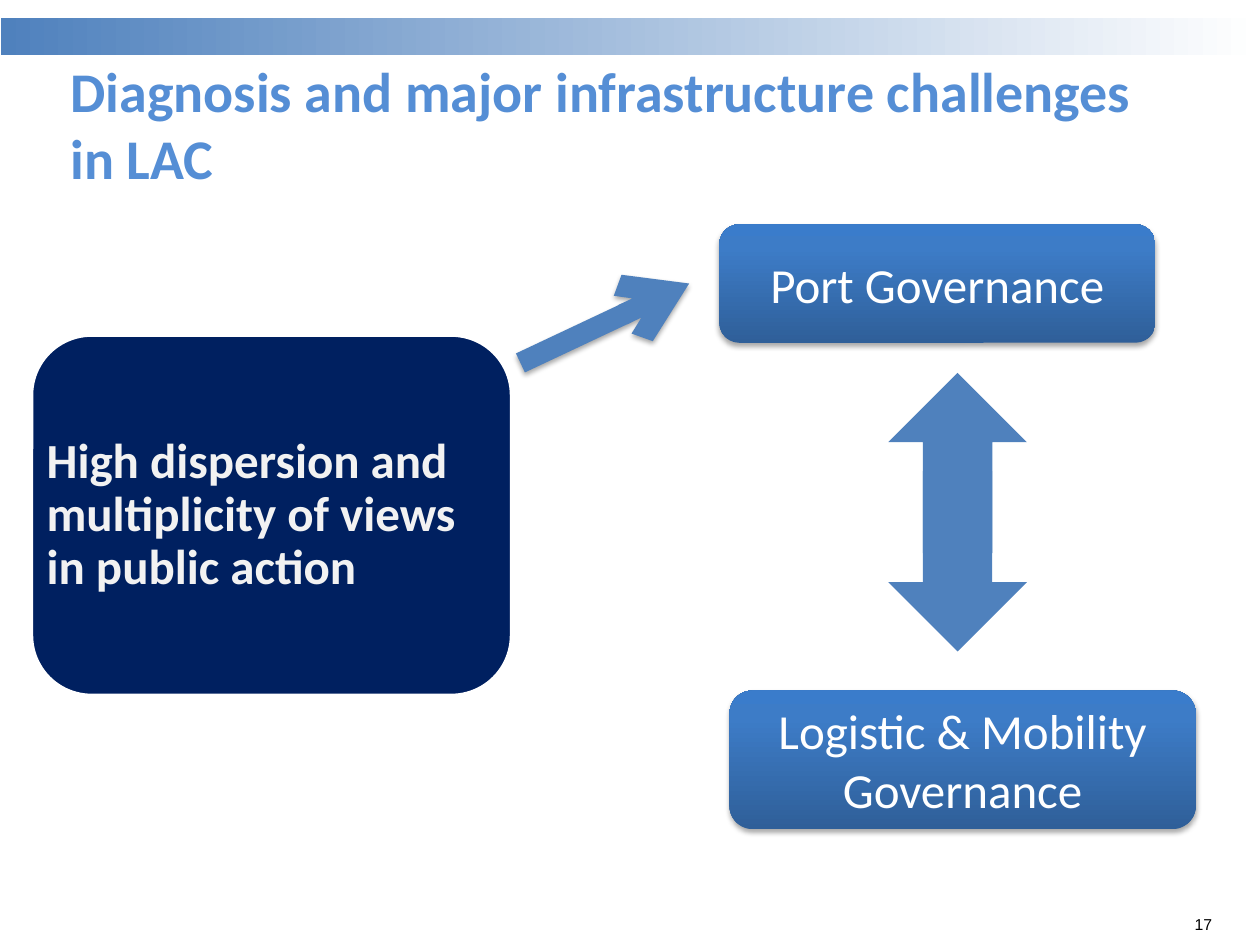
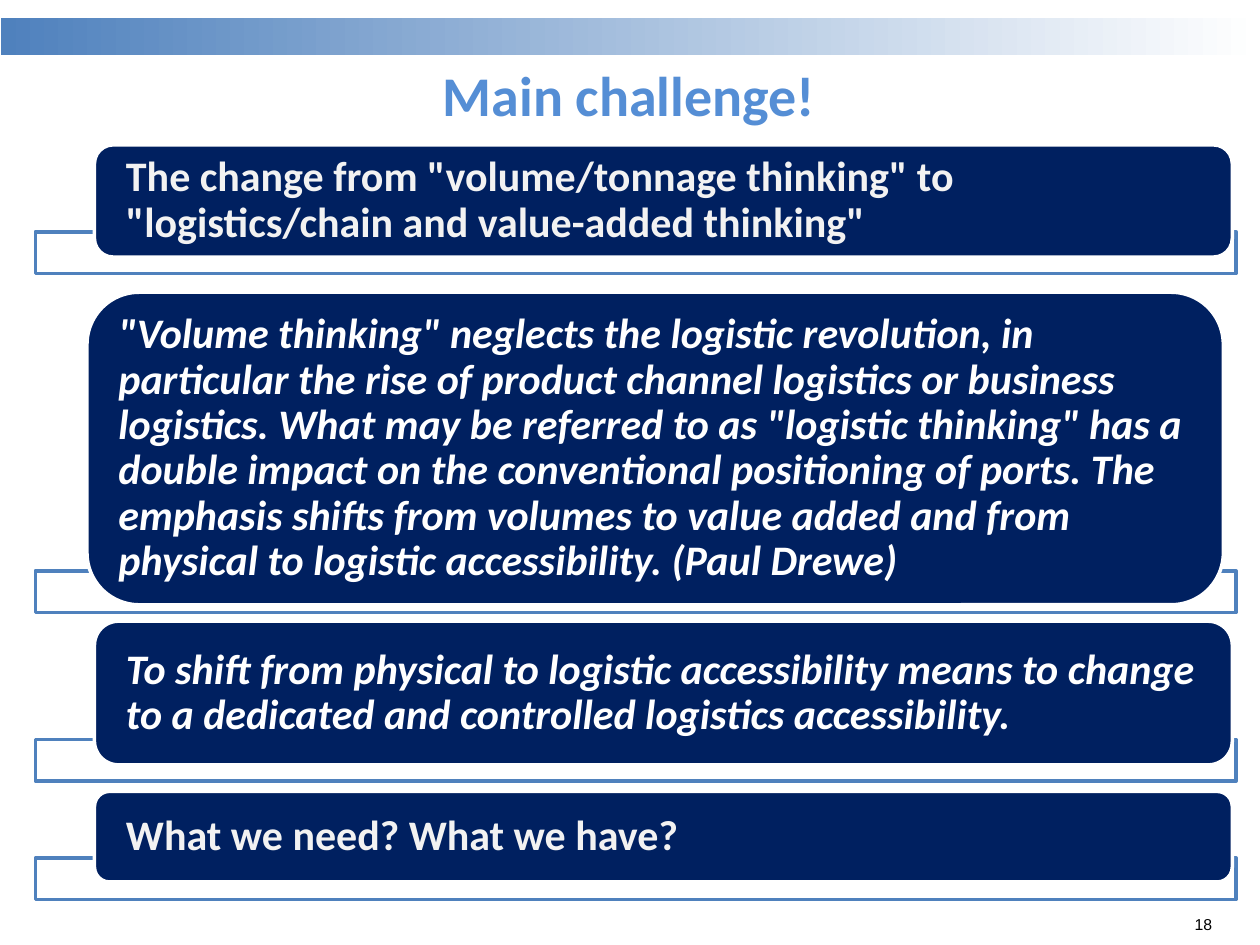
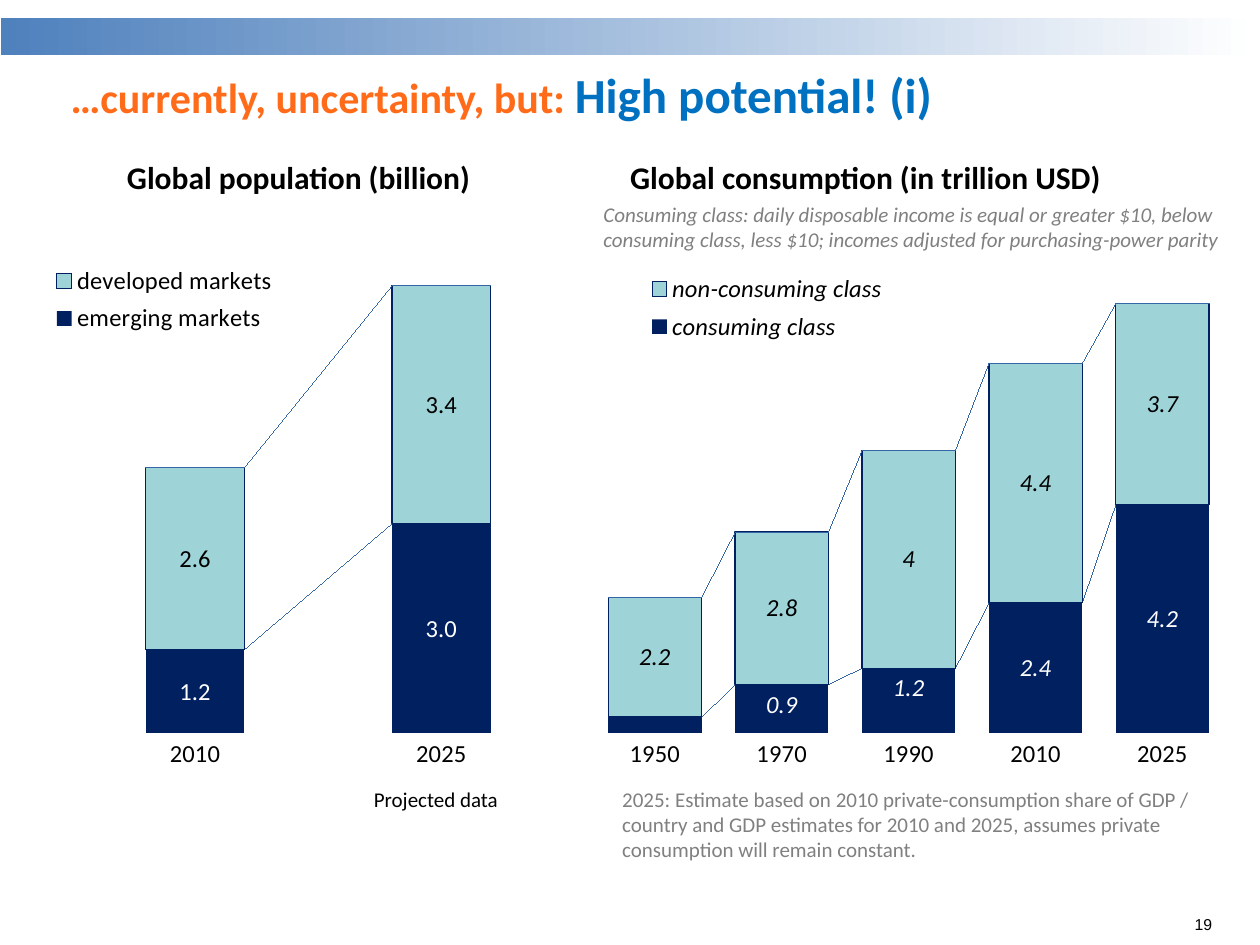
from dataclasses import dataclass

from pptx import Presentation
from pptx.chart.data import CategoryChartData
from pptx.dml.color import RGBColor
from pptx.enum.chart import XL_CHART_TYPE, XL_LABEL_POSITION, XL_LEGEND_POSITION, XL_TICK_MARK
from pptx.enum.shapes import MSO_CONNECTOR, MSO_SHAPE
from pptx.enum.text import MSO_ANCHOR, MSO_AUTO_SIZE, PP_ALIGN
from pptx.oxml import parse_xml
from pptx.oxml.ns import nsdecls, qn
from pptx.util import Pt

LEFT, CENTER, RIGHT = PP_ALIGN.LEFT, PP_ALIGN.CENTER, PP_ALIGN.RIGHT
TOP, MIDDLE = MSO_ANCHOR.TOP, MSO_ANCHOR.MIDDLE
RECTANGLE, ROUNDED = MSO_SHAPE.RECTANGLE, MSO_SHAPE.ROUNDED_RECTANGLE
DOWN_ARROW = MSO_SHAPE.DOWN_ARROW
LABEL_CENTER, LABEL_INSIDE_END = XL_LABEL_POSITION.CENTER, XL_LABEL_POSITION.INSIDE_END

COLORS = {
    "title": "558ED5",
    "blue": "4F81BD",
    "navy": "002060",
    "teal": "9ED3D7",
    "white": "FFFFFF",
    "off_white": "F2F2F2",
    "black": "000000",
    "gray": "808080",
    "orange": "FF6B19",
    "bright_blue": "0070C0",
    "series_line": "3A6FB5",
    "box_dark": "2F5F99",
    "box_mid": "3D7CC7",
    "box_light": "3A7CCB",
}
BAND_STOPS = [(0, "blue"), (100, "white")]
BOX_STOPS = [(0, "box_dark"), (80, "box_mid"), (100, "box_light")]
FIRST_NUMBER = 17


@dataclass(frozen=True)
class Area:
    left: float
    top: float
    width: float
    height: float

    def lengths(self) -> list:
        return [Pt(value) for value in (self.left, self.top, self.width, self.height)]


@dataclass(frozen=True)
class Style:
    size: float
    color: str = "black"
    bold: bool = False
    italic: bool = False
    align: PP_ALIGN = LEFT
    anchor: MSO_ANCHOR = TOP
    font: str = "Calibri"
    inset_x: float = 7.2
    inset_y: float = 3.6
    line_spacing: float = 1.0
    wrap: bool = True


@dataclass(frozen=True)
class Panel:
    area: Area
    rail_top: float
    text: str
    style: Style


@dataclass(frozen=True)
class StackedChart:
    area: Area
    categories: list
    series: dict
    number_format: str
    maximum: float
    gap: int
    plot_layout: tuple
    legend_layout: tuple
    lower_position: XL_LABEL_POSITION
    centered_points: tuple = ()
    unlabeled_points: tuple = ()
    italic: bool = False


TITLE = Style(32, "title", bold=True, anchor=MIDDLE)
CENTERED_TITLE = Style(32, "title", bold=True, align=CENTER, anchor=MIDDLE)
PAGE_NUMBER = Style(9, align=RIGHT, font="Arial", inset_x=0, inset_y=0, wrap=False)
BOX_LABEL = Style(28, "white", align=CENTER, anchor=MIDDLE)
DISPERSION = Style(28, "off_white", bold=True, anchor=MIDDLE,
                   inset_x=8.64, inset_y=8.64, line_spacing=0.9)
STATEMENT = Style(24, "off_white", bold=True, anchor=MIDDLE,
                  inset_x=18, inset_y=0, line_spacing=0.9)
QUOTE = Style(24, "white", bold=True, italic=True, anchor=MIDDLE,
              inset_x=18, inset_y=0, line_spacing=0.9)
CHART_HEADING = Style(18, bold=True, anchor=MIDDLE)

PANELS = [
    Panel(Area(54, 82.8, 650.2, 64.1), 132.5,
          'The change from "volume/tonnage thinking" to '
          '"logistics/chain and value-added thinking"', STATEMENT),
    Panel(Area(49.7, 167, 649.4, 178.6), 326.2,
          '"Volume thinking" neglects the logistic revolution, in particular the rise of '
          'product channel logistics or business logistics. What may be referred to as '
          '"logistic thinking" has a double impact on the conventional positioning of ports. '
          'The emphasis shifts from volumes to value added and from physical to logistic '
          'accessibility. (Paul Drewe)', QUOTE),
    Panel(Area(54, 355, 650.2, 82.1), 422.6,
          "To shift from physical to logistic accessibility means to change to a dedicated "
          "and controlled logistics accessibility.", QUOTE),
    Panel(Area(54, 452.2, 650.2, 51.8), 490.3, "What we need? What we have?", STATEMENT),
]

CHARTS = [
    StackedChart(
        Area(323.3, 133.9, 396.7, 311.8),
        ["1950", "1970", "1990", "2010", "2025"],
        {"consuming class": [0.3, 0.9, 1.2, 2.4, 4.2],
         "non-consuming class": [2.2, 2.8, 4, 4.4, 3.7]},
        "General", 9, 36, (0.037, 0.017, 0.914, 0.898), (0.07, 0.06, 0.44, 0.15),
        LABEL_INSIDE_END, centered_points=(3, 4), unlabeled_points=(0,), italic=True),
    StackedChart(
        Area(8.6, 133.9, 334.8, 311.8),
        ["2010", "2025"],
        {"emerging markets": [1.2, 3], "developed markets": [2.6, 3.4]},
        "0.0", 7, 150, (0.097, 0.017, 0.841, 0.898), (0.015, 0.045, 0.48, 0.15),
        LABEL_CENTER),
]

NOTES = [
    (Area(65.5, 88.6, 260, 24.5), "Global population (billion)", CHART_HEADING),
    (Area(353, 88.6, 353, 24.5), "Global consumption (in trillion USD)", CHART_HEADING),
    (Area(337.7, 111.6, 382.3, 36),
     "Consuming class: daily disposable income is equal or greater $10, below consuming "
     "class, less $10; incomes adjusted for purchasing-power parity",
     Style(12, "gray", italic=True)),
    (Area(206.6, 445.7, 86.4, 21.6), "Projected data", Style(12, wrap=False)),
    (Area(348.5, 445.7, 348.5, 51.1),
     "2025: Estimate based on 2010 private-consumption share of GDP / country and GDP "
     "estimates for 2010 and 2025, assumes private consumption will remain constant.",
     Style(12, "gray")),
]


def rgb(name: str) -> RGBColor:
    return RGBColor.from_string(COLORS[name])


def write_text(frame, text: str, style: Style):
    """Fill a text frame with one paragraph and return that paragraph."""
    frame.auto_size = MSO_AUTO_SIZE.NONE
    frame.word_wrap = style.wrap
    frame.vertical_anchor = style.anchor
    frame.margin_left = frame.margin_right = Pt(style.inset_x)
    frame.margin_top = frame.margin_bottom = Pt(style.inset_y)
    para = frame.paragraphs[0]
    para.text = text
    para.alignment = style.align
    para.line_spacing = style.line_spacing
    font = para.font
    font.name, font.size = style.font, Pt(style.size)
    font.bold, font.italic = style.bold, style.italic
    font.color.rgb = rgb(style.color)
    return para


def add_text(page, area: Area, text: str, style: Style) -> None:
    write_text(page.shapes.add_textbox(*area.lengths()).text_frame, text, style)


def add_box(page, kind, area: Area, fill: str = "", line: str = ""):
    """Draw a preset shape; an empty colour name means no fill or no line."""
    box = page.shapes.add_shape(kind, *area.lengths())
    box.shadow.inherit = False
    if fill:
        box.fill.solid()
        box.fill.fore_color.rgb = rgb(fill)
    else:
        box.fill.background()
    if line:
        box.line.color.rgb = rgb(line)
        box.line.width = Pt(2)
    else:
        box.line.fill.background()
    return box


def add_gradient_box(page, kind, area: Area, stops: list, angle: int):
    box = add_box(page, kind, area)
    stop_xml = "".join(
        f'<a:gs pos="{place * 1000}"><a:srgbClr val="{COLORS[name]}"/></a:gs>'
        for place, name in stops)
    gradient = parse_xml(
        f'<a:gradFill {nsdecls("a")} rotWithShape="1"><a:gsLst>{stop_xml}</a:gsLst>'
        f'<a:lin ang="{angle * 60000}" scaled="0"/></a:gradFill>')
    properties = box.element.spPr
    properties.replace(properties.find(qn("a:noFill")), gradient)
    return box


def add_shadow(shape) -> None:
    properties = shape.element.spPr
    empty = properties.find(qn("a:effectLst"))
    if empty is not None:
        properties.remove(empty)
    properties.append(parse_xml(
        f'<a:effectLst {nsdecls("a")}><a:outerShdw blurRad="{Pt(3.1)}" dist="{Pt(1.8)}" '
        f'dir="5400000" rotWithShape="0"><a:srgbClr val="{COLORS["black"]}">'
        '<a:alpha val="35000"/></a:srgbClr></a:outerShdw></a:effectLst>'))


def add_panel(page, area: Area, text: str, style: Style) -> None:
    add_box(page, ROUNDED, area, "navy", "white")
    add_text(page, area, text, style)


def add_page(deck, number: int, title: str, style: Style, title_top: float = 30.2):
    """Start a slide with its title, top band and page number."""
    page = deck.slides.add_slide(deck.slide_layouts.get_by_name("Title Only"))
    heading = page.shapes.title
    area = Area(33.1, title_top, 653, 47.5)
    heading.left, heading.top, heading.width, heading.height = area.lengths()
    write_text(heading.text_frame, title, style)
    add_gradient_box(page, RECTANGLE, Area(0.7, 10.1, 719.3, 21.6), BAND_STOPS, 0)
    add_text(page, Area(681.8, 522.7, 10.8, 10.8), str(number), PAGE_NUMBER)
    return page


def set_layout(parent, index: int, layout: tuple, inner: bool = False) -> None:
    """Place a chart part by fractions of the chart's size."""
    for old in parent.findall(qn("c:layout")):
        parent.remove(old)
    target = '<c:layoutTarget val="inner"/>' if inner else ""
    sizes = "".join(f'<c:{name} val="{value}"/>' for name, value in zip("xywh", layout))
    parent.insert(index, parse_xml(
        f'<c:layout {nsdecls("c")}><c:manualLayout>{target}<c:xMode val="edge"/>'
        f'<c:yMode val="edge"/>{sizes}</c:manualLayout></c:layout>'))


def format_font(font, color: str, italic: bool = False) -> None:
    font.name, font.size, font.italic = "Calibri", Pt(14), italic
    font.color.rgb = rgb(color)


def add_series_lines(chart) -> None:
    overlap = chart.element.xpath(".//c:barChart/c:overlap")[0]
    overlap.addnext(parse_xml(
        f'<c:serLines {nsdecls("c", "a")}><c:spPr><a:ln w="{Pt(0.5)}"><a:solidFill>'
        f'<a:srgbClr val="{COLORS["series_line"]}"/></a:solidFill></a:ln></c:spPr>'
        '</c:serLines>'))


def label_series(series, color: str, position, info: StackedChart) -> None:
    labels = series.data_labels
    labels.show_value = True
    labels.number_format, labels.number_format_is_linked = info.number_format, False
    labels.position = position
    format_font(labels.font, color, info.italic)


def add_stacked_chart(page, info: StackedChart) -> None:
    data = CategoryChartData(number_format=info.number_format)
    data.categories = info.categories
    for name, values in info.series.items():
        data.add_series(name, values)
    chart = page.shapes.add_chart(
        XL_CHART_TYPE.COLUMN_STACKED, *info.area.lengths(), data).chart
    chart.has_title = False
    format_font(chart.font, "black")

    chart.has_legend = True
    chart.legend.position = XL_LEGEND_POSITION.RIGHT
    chart.legend.include_in_layout = False
    format_font(chart.legend.font, "black", info.italic)
    set_layout(chart.element.xpath(".//c:legend")[0], 1, info.legend_layout)
    set_layout(chart.element.xpath(".//c:plotArea")[0], 0, info.plot_layout, inner=True)

    value_axis, category_axis = chart.value_axis, chart.category_axis
    value_axis.minimum_scale, value_axis.maximum_scale = 0, info.maximum
    value_axis.has_major_gridlines = False
    value_axis.visible = False
    category_axis.major_tick_mark = XL_TICK_MARK.NONE
    category_axis.format.line.fill.background()

    plot = chart.plots[0]
    plot.gap_width, plot.overlap, plot.vary_by_categories = info.gap, 100, False
    add_series_lines(chart)
    lower, upper = plot.series
    for series, color in ((lower, "navy"), (upper, "teal")):
        series.format.fill.solid()
        series.format.fill.fore_color.rgb = rgb(color)
    upper.format.line.color.rgb = rgb("navy")
    upper.format.line.width = Pt(0.75)
    label_series(lower, "white", info.lower_position, info)
    label_series(upper, "black", LABEL_CENTER, info)
    for index in info.centered_points:
        label = lower.points[index].data_label
        format_font(label.font, "white", info.italic)
        label.position = LABEL_CENTER
    lower_labels = chart.element.xpath(".//c:ser/c:dLbls")[0]
    for index in reversed(info.unlabeled_points):
        lower_labels.insert(0, parse_xml(
            f'<c:dLbl {nsdecls("c")}><c:idx val="{index}"/><c:delete val="1"/></c:dLbl>'))


def build_governance(deck, number: int) -> None:
    page = add_page(deck, number, "Diagnosis and major infrastructure challenges in LAC",
                    TITLE, title_top=46.8)
    add_panel(page, Area(18, 191.5, 274.3, 205.9),
              "High dispersion and multiplicity of views in public action", DISPERSION)

    arrow = page.shapes.add_connector(
        MSO_CONNECTOR.STRAIGHT, Pt(297.4), Pt(207.4), Pt(393.8), Pt(162))
    arrow.line.color.rgb = rgb("blue")
    arrow.line.width = Pt(12)
    arrow.line._get_or_add_ln().append(
        parse_xml(f'<a:tailEnd {nsdecls("a")} type="arrow"/>'))
    add_shadow(arrow)

    for area, label in (
        (Area(411.1, 128.2, 249.1, 67.7), "Port Governance"),
        (Area(416.9, 394.6, 266.4, 79.2), "Logistic & Mobility Governance"),
    ):
        box = add_gradient_box(page, ROUNDED, area, BOX_STOPS, 270)
        add_shadow(box)
        write_text(box.text_frame, label, BOX_LABEL)

    for top, rotation in ((269.3, 0), (213.1, 180)):
        half = add_box(page, DOWN_ARROW, Area(507.6, top, 79.2, 103), "blue")
        half.rotation = rotation


def build_challenge(deck, number: int) -> None:
    page = add_page(deck, number, "Main challenge!", CENTERED_TITLE)
    for panel in PANELS:
        add_box(page, RECTANGLE, Area(20.2, panel.rail_top, 686.2, 23.8), "white", "blue")
        add_panel(page, panel.area, panel.text, panel.style)


def build_potential(deck, number: int) -> None:
    page = add_page(deck, number, "…currently, uncertainty, but: ",
                    Style(24, "orange", bold=True, anchor=MIDDLE))
    span = page.shapes.title.text_frame.paragraphs[0].add_run()
    span.text = "High potential! (i)"
    span.font.size = Pt(28)
    span.font.color.rgb = rgb("bright_blue")
    for info in CHARTS:
        add_stacked_chart(page, info)
    for area, text, style in NOTES:
        add_text(page, area, text, style)


def main() -> None:
    deck = Presentation()
    deck.slide_width, deck.slide_height = Pt(720), Pt(540)
    builders = (build_governance, build_challenge, build_potential)
    for number, build in enumerate(builders, FIRST_NUMBER):
        build(deck, number)
    deck.save("out.pptx")


if __name__ == "__main__":
    main()
